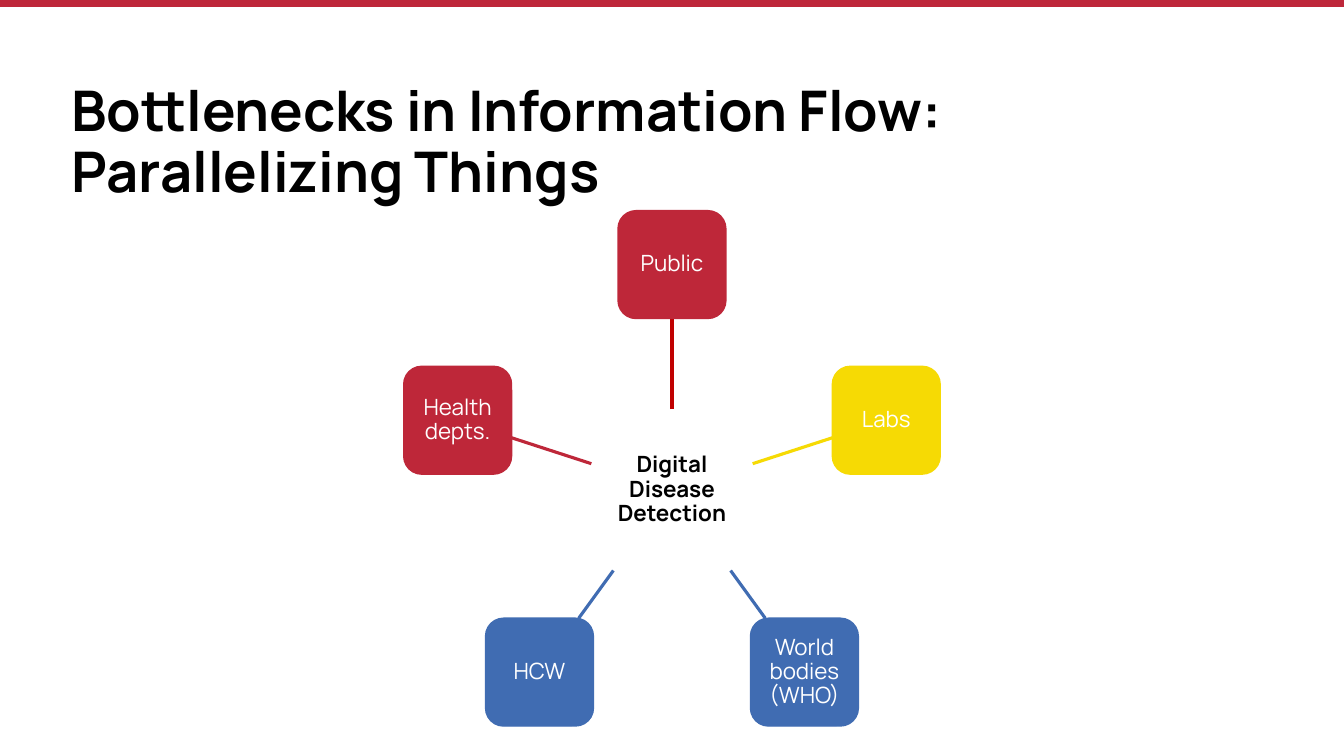
import math
import pptx
import pptx.util
import pptx.dml.color
import pptx.enum.shapes
import pptx.enum.text
import lxml.etree
import pptx.oxml.ns

Inches = pptx.util.Inches
Pt = pptx.util.Pt
RGBColor = pptx.dml.color.RGBColor
SHAPES = pptx.enum.shapes.MSO_SHAPE
STRAIGHT = pptx.enum.shapes.MSO_CONNECTOR.STRAIGHT
MIDDLE = pptx.enum.text.MSO_ANCHOR.MIDDLE
CENTER = pptx.enum.text.PP_ALIGN.CENTER

BLACK = RGBColor(0x00, 0x00, 0x00)
WHITE = RGBColor(0xFF, 0xFF, 0xFF)
BANNER_RED = RGBColor(0xBE, 0x27, 0x3A)
RED = RGBColor(0xBE, 0x27, 0x39)
DARK_RED = RGBColor(0xC0, 0x00, 0x00)
YELLOW = RGBColor(0xF6, 0xDA, 0x04)
BLUE = RGBColor(0x40, 0x6C, 0xB2)

WIDTH, HEIGHT = 13.33, 7.5
HUB_X, HUB_Y = WIDTH / 2, 4.86
HUB_SIZE, NODE_SIZE, RADIUS = 1.6, 1.07, 2.235

deck = pptx.Presentation()
deck.slide_width = Inches(WIDTH)
deck.slide_height = Inches(HEIGHT)
page = deck.slides.add_slide(deck.slide_layouts[6])


def add_line(start_x, start_y, end_x, end_y, color, weight):
    line = page.shapes.add_connector(
        STRAIGHT, Inches(start_x), Inches(start_y), Inches(end_x), Inches(end_y))
    line.line.color.rgb = color
    line.line.width = Pt(weight)
    properties = line._element.spPr
    lxml.etree.SubElement(properties, pptx.oxml.ns.qn("a:effectLst"))


def add_tile(center_x, center_y, size, label, fill, outline, color, bold):
    tile = page.shapes.add_shape(
        SHAPES.ROUNDED_RECTANGLE, Inches(center_x - size / 2),
        Inches(center_y - size / 2), Inches(size), Inches(size))
    tile.shadow.inherit = False
    if fill is None:
        tile.fill.background()
    else:
        tile.fill.solid()
        tile.fill.fore_color.rgb = fill
    tile.line.color.rgb = outline
    tile.line.width = Pt(1)
    frame = tile.text_frame
    frame.word_wrap = True
    frame.vertical_anchor = MIDDLE
    frame.margin_left = frame.margin_right = Inches(0.04)
    frame.margin_top = frame.margin_bottom = Inches(0.04)
    para = frame.paragraphs[0]
    para.text = label
    para.alignment = CENTER
    para.line_spacing = 0.9
    para.font.name = "Manrope"
    para.font.size = Pt(16)
    para.font.bold = bold
    para.font.color.rgb = color


add_line(0, 0.03, WIDTH, 0.03, BANNER_RED, 6)

add_tile(HUB_X, HUB_Y, HUB_SIZE, "Digital Disease Detection", None, WHITE, BLACK, True)

nodes = [
    ("Public", RED, DARK_RED),
    ("Labs", YELLOW, YELLOW),
    ("World bodies (WHO)", BLUE, BLUE),
    ("HCW", BLUE, BLUE),
    ("Health depts.", RED, RED),
]
for index, (label, fill, spoke_color) in enumerate(nodes):
    angle = math.tau * index / len(nodes)
    across, down = math.sin(angle), -math.cos(angle)
    reach = max(abs(across), abs(down))
    inner = HUB_SIZE / 2 / reach
    outer = RADIUS - NODE_SIZE / 2 / reach
    add_line(HUB_X + inner * across, HUB_Y + inner * down,
             HUB_X + outer * across, HUB_Y + outer * down, spoke_color, 2.25)
    add_tile(HUB_X + RADIUS * across, HUB_Y + RADIUS * down,
             NODE_SIZE, label, fill, fill, WHITE, False)

title = page.shapes.add_textbox(Inches(0.61), Inches(0.7), Inches(12.07), Inches(1.45))
title.text_frame.word_wrap = True
title.text_frame.vertical_anchor = MIDDLE
heading = title.text_frame.paragraphs[0]
heading.text = "Bottlenecks in Information Flow: Parallelizing Things"
heading.line_spacing = 0.9
heading.font.name = "Manrope"
heading.font.size = Pt(40)
heading.font.bold = True
heading.font.color.rgb = BLACK

deck.save("out.pptx")
